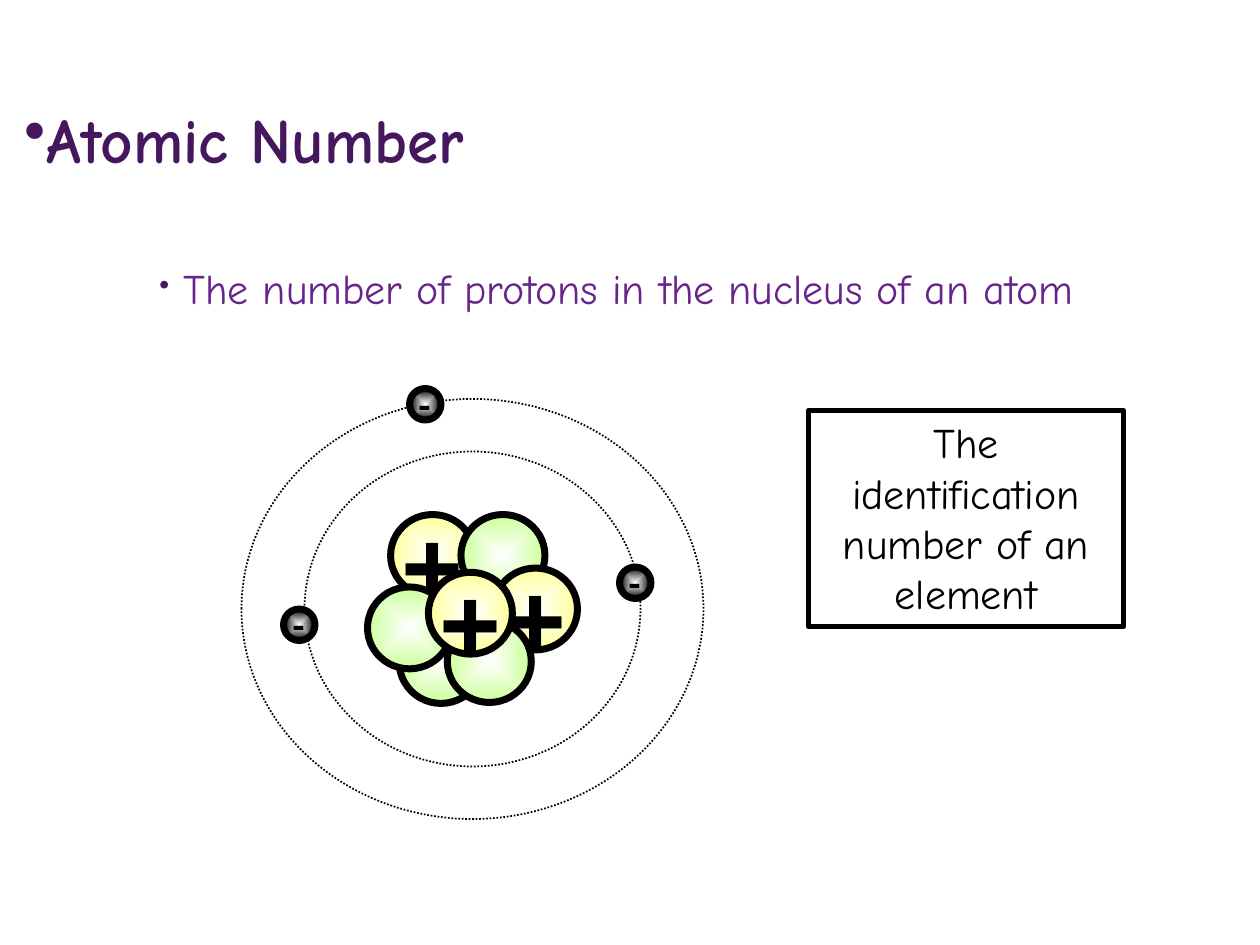
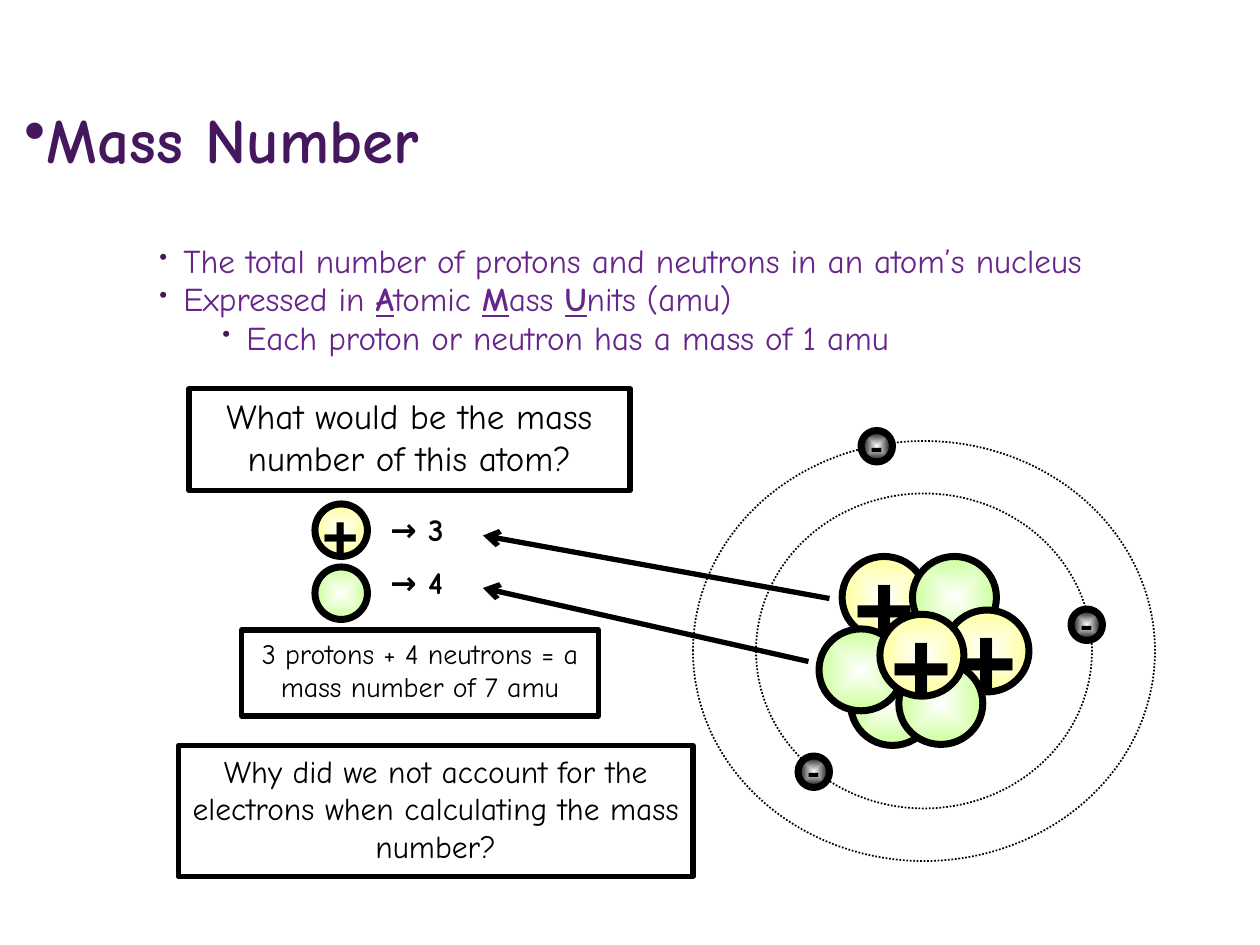
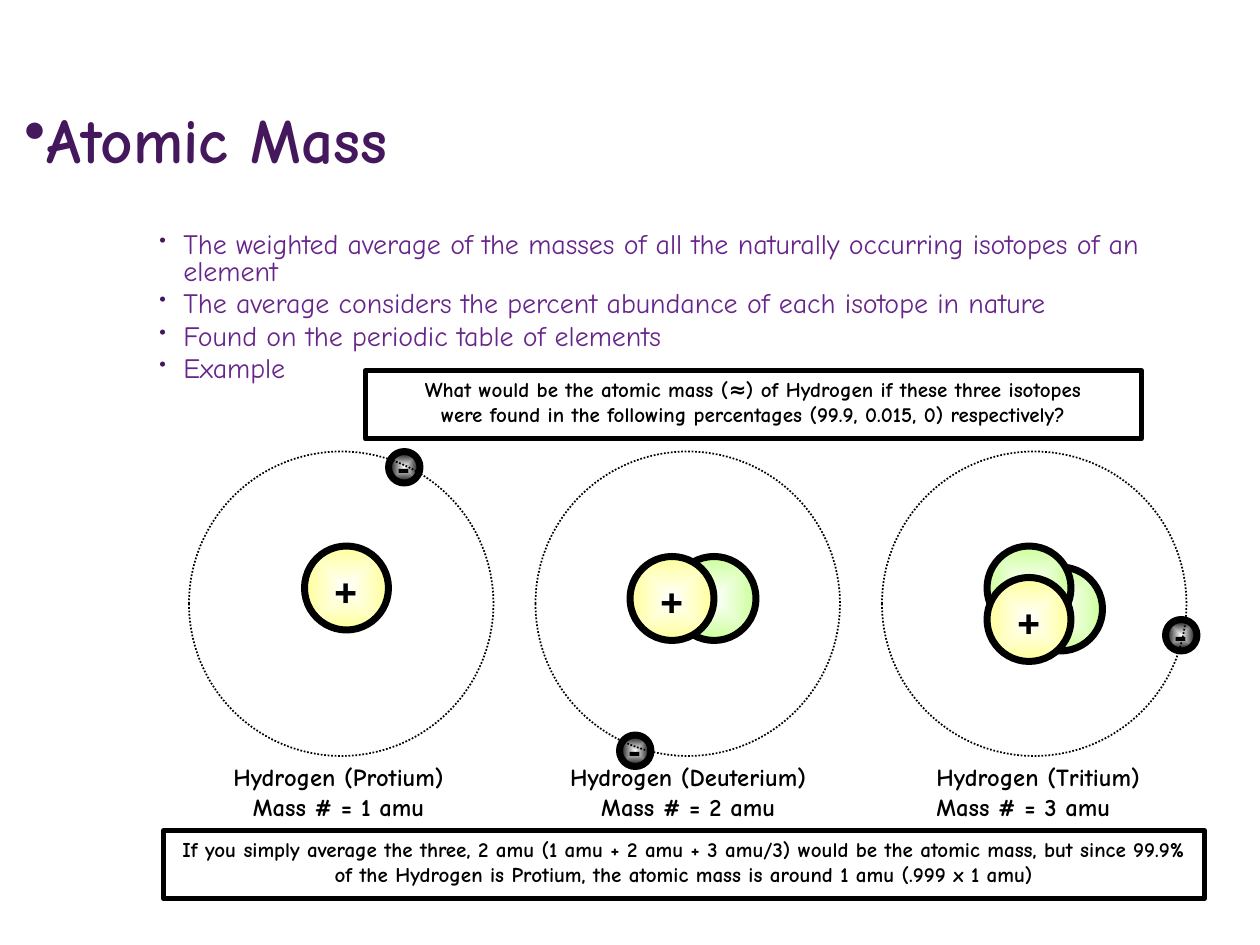
from dataclasses import dataclass
from typing import NamedTuple

from lxml.etree import SubElement
from pptx import Presentation
from pptx.dml.color import RGBColor
from pptx.enum.dml import MSO_LINE
from pptx.enum.shapes import MSO_CONNECTOR, MSO_SHAPE
from pptx.enum.text import MSO_ANCHOR, MSO_AUTO_SIZE, PP_ALIGN
from pptx.oxml.ns import qn
from pptx.util import Emu, Inches, Pt

WIDE, HIGH = Inches(10), Inches(7.5)
COLS, ROWS = 120, 90
HAND, SIGN = "Comic Neue", "TeX Gyre Adventor"
BLACK, WHITE, PLUM, GRAPE = "000000", "FFFFFF", "45185E", "67258C"
LEFT, MID = PP_ALIGN.LEFT, PP_ALIGN.CENTER


class Area(NamedTuple):
    """A place on the grid, in columns and rows."""
    col: float
    row: float
    wide: float
    tall: float


class Spot(NamedTuple):
    col: float
    row: float


@dataclass(frozen=True)
class Kind:
    """A sort of particle: edge colour, sign, sign size and extent."""
    edge: str
    sign: str = ""
    size: int = 20
    wide: float = 8
    tall: float = 8


@dataclass(frozen=True)
class Grain:
    kind: Kind
    spot: Spot


@dataclass(frozen=True)
class Note:
    """A block of text, one string for each paragraph."""
    area: Area
    lines: tuple[str, ...]
    size: int
    bold: bool = False
    align: PP_ALIGN = MID


@dataclass(frozen=True)
class Atom:
    """A one-ring atom; the spots of its grains count from the ring's corner."""
    grains: tuple[Grain, ...]
    label: Note


YELLOW, GREEN = "FFFF99", "CCFF99"
PROTON = Kind(YELLOW, "+", 54, tall=7.8)
NEUTRON = Kind(GREEN, tall=7.8)
BIG = Kind(GREEN)
LONE = Kind(YELLOW, "+")
ELECTRON = Kind(BLACK, "-", wide=3, tall=3)
KEYS = (Kind(YELLOW, "+", 32, 5, 5), Kind(GREEN, wide=5, tall=5))

CORE = (
    Grain(BIG, Spot(15, 21)),
    Grain(PROTON, Spot(14.2, 11)),
    Grain(NEUTRON, Spot(20.9, 11)),
    Grain(PROTON, Spot(24, 16.1)),
    Grain(NEUTRON, Spot(12, 17.9)),
    Grain(NEUTRON, Spot(19.6, 21.1)),
    Grain(PROTON, Spot(17.8, 16.5)),
)

RING, STEP, START = 29, 33, Spot(18, 43)
ATOMS = (
    Atom((Grain(LONE, Spot(11, 9)), Grain(ELECTRON, Spot(19, 0))),
         Note(Area(20.2, 72, 24.1, 6.8), ("Hydrogen (Protium)", "Mass # = 1 amu"), 14, True)),
    Atom((Grain(BIG, Spot(13, 10)), Grain(LONE, Spot(9, 10)), Grain(ELECTRON, Spot(8, 27))),
         Note(Area(52, 72, 27.1, 6.8), ("Hydrogen (Deuterium)", "Mass # = 2 amu"), 14, True)),
    Atom((Grain(BIG, Spot(13, 11)), Grain(BIG, Spot(10, 9)), Grain(LONE, Spot(10, 12)),
          Grain(ELECTRON, Spot(27, 16))),
         Note(Area(88, 72, 23.9, 6.8), ("Hydrogen (Tritium)", "Mass # = 3 amu"), 14, True, LEFT)),
)


def x(col: float) -> Emu:
    return Emu(round(WIDE * col / COLS))


def y(row: float) -> Emu:
    return Emu(round(HIGH * row / ROWS))


def place(area: Area) -> tuple[Emu, Emu, Emu, Emu]:
    return x(area.col), y(area.row), x(area.wide), y(area.tall)


def tint(code: str) -> RGBColor:
    return RGBColor.from_string(code)


def style(para, size: float, code: str = BLACK, bold: bool = False, face: str = HAND) -> None:
    font = para.font
    font.name, font.size, font.bold = face, Pt(size), bold
    font.color.rgb = tint(code)


def bullet(para, left: float = 0, hang: float = 0, share: int = 100) -> None:
    """Give a paragraph a plum dot; left and hang are inches."""
    props = para._p.get_or_add_pPr()
    props.set("marL", str(Inches(left)))
    props.set("indent", str(-Inches(hang)))
    shade = SubElement(props, qn("a:buClr"))
    SubElement(shade, qn("a:srgbClr"), val=PLUM)
    SubElement(props, qn("a:buSzPct"), val=str(share * 1000))
    SubElement(props, qn("a:buChar"), char="•")


def start(deck, title: str):
    """Add a slide with its title."""
    slide = deck.slides.add_slide(deck.slide_layouts[5])
    head = slide.shapes.title
    head.left, head.top, head.width, head.height = place(Area(1.1, 9, 108, 8.4))
    frame = head.text_frame
    frame.text = title
    frame.auto_size, frame.word_wrap = MSO_AUTO_SIZE.NONE, True
    frame.vertical_anchor = MSO_ANCHOR.MIDDLE
    para = frame.paragraphs[0]
    para.alignment = LEFT
    bullet(para)
    style(para, 36, PLUM, True)
    return slide


def body(slide, area: Area, lines: tuple[tuple[int, str], ...], size: int, lead: float) -> None:
    """Write (level, text) bullets; text between stars is bold and underlined."""
    frame = slide.shapes.add_textbox(*place(area)).text_frame
    frame.word_wrap = True
    for num, (level, text) in enumerate(lines):
        para = frame.add_paragraph() if num else frame.paragraphs[0]
        para.level, para.line_spacing = level, lead
        para.space_before = Pt(size * 0.2 if num else 0)
        bullet(para, 0.19 + level / 2, 0.19, 70)
        style(para, size, GRAPE)
        for turn, piece in enumerate(text.split("*")):
            run = para.add_run()
            run.text = piece
            if turn % 2:
                run.font.bold = run.font.underline = True


def write(shape, note: Note, wrap: bool) -> None:
    frame = shape.text_frame
    frame.word_wrap, frame.auto_size = wrap, MSO_AUTO_SIZE.SHAPE_TO_FIT_TEXT
    frame.vertical_anchor = MSO_ANCHOR.TOP
    frame.text = "\n".join(note.lines)
    for para in frame.paragraphs:
        para.alignment = note.align
        style(para, note.size, bold=note.bold)


def label(slide, note: Note, wrap: bool = False) -> None:
    write(slide.shapes.add_textbox(*place(note.area)), note, wrap)


def form(slide, kind: MSO_SHAPE, area: Area, weight: float):
    """Add a black-edged shape without shadow."""
    shape = slide.shapes.add_shape(kind, *place(area))
    shape.shadow.inherit = False
    shape.line.color.rgb, shape.line.width = tint(BLACK), Pt(weight)
    return shape


def box(slide, note: Note) -> None:
    shape = form(slide, MSO_SHAPE.RECTANGLE, note.area, 3)
    shape.fill.solid()
    shape.fill.fore_color.rgb = tint(WHITE)
    write(shape, note, True)


def orbit(slide, area: Area) -> None:
    ring = form(slide, MSO_SHAPE.OVAL, area, 1)
    ring.fill.background()
    ring.line.dash_style = MSO_LINE.ROUND_DOT


def glow(shape, edge: str) -> None:
    """Fill with a gradient from a white centre out to the edge colour."""
    shape.fill.gradient()
    for stop, code in zip(shape.fill.gradient_stops, (WHITE, edge)):
        stop.color.rgb = tint(code)
    grad = shape._element.spPr.find(qn("a:gradFill"))
    grad.remove(grad.find(qn("a:lin")))
    route = SubElement(grad, qn("a:path"), {"path": "shape"})
    SubElement(route, qn("a:fillToRect"), dict.fromkeys("ltrb", "50000"))


def ball(slide, grain: Grain, base: Spot = Spot(0, 0)) -> None:
    kind, spot = grain.kind, grain.spot
    area = Area(base.col + spot.col, base.row + spot.row, kind.wide, kind.tall)
    shape = form(slide, MSO_SHAPE.OVAL, area, 4)
    glow(shape, kind.edge)
    if kind.sign:
        frame = shape.text_frame
        frame.text, frame.word_wrap = kind.sign, False
        frame.vertical_anchor = MSO_ANCHOR.MIDDLE
        para = frame.paragraphs[0]
        para.alignment = MID
        style(para, kind.size, bold=True, face=SIGN)


def lithium(slide, base: Spot, third: Spot) -> None:
    """Draw the two-ring atom; third is the spot of its one free electron."""
    for grain in CORE:
        ball(slide, grain, base)
    orbit(slide, Area(base.col + 6, base.row + 5, 32, 30))
    orbit(slide, Area(base.col, base.row, 44, 40))
    for spot in (Spot(36, 16), third, Spot(16, -1)):
        ball(slide, Grain(ELECTRON, spot), base)


def arrow(slide, tail: Spot, tip: Spot) -> None:
    link = slide.shapes.add_connector(
        MSO_CONNECTOR.STRAIGHT, x(tail.col), y(tail.row), x(tip.col), y(tip.row))
    link.line.color.rgb, link.line.width = tint(BLACK), Pt(3)
    props = link._element.spPr
    SubElement(props.find(qn("a:ln")), qn("a:tailEnd"), type="arrow")
    SubElement(props, qn("a:effectLst"))


def number(deck) -> None:
    slide = start(deck, "Atomic Number")
    body(slide, Area(14, 25, 100, 7),
         ((0, "The number of protons in the nucleus of an atom"),), 24, 0.9)
    lithium(slide, Spot(23, 38), Spot(4, 20))
    box(slide, Note(Area(77, 39.1, 30, 20.6),
                    ("The identification number of an element",), 24))


def mass(deck) -> None:
    slide = start(deck, "Mass Number")
    body(slide, Area(14, 23, 100, 16), (
        (0, "The total number of protons and neutrons in an atom’s nucleus"),
        (0, "Expressed in *A*tomic *M*ass *U*nits (amu)"),
        (1, "Each proton or neutron has a mass of 1 amu"),
    ), 19, 0.8)
    lithium(slide, Spot(66, 42), Spot(10, 30))
    box(slide, Note(Area(18, 37, 42, 9.7), ("What would be the mass number of this atom?",), 20))
    tails, tips = (Spot(79, 57), Spot(77, 63)), (Spot(46, 51), Spot(46, 56))
    for num, (kind, tail, tip) in enumerate(zip(KEYS, tails, tips)):
        arrow(slide, tail, tip)
        ball(slide, Grain(kind, Spot(30, 48 + 6 * num)))
        label(slide, Note(Area(36, 48 + 5 * num, 10.2, 4.8), (f"→ {3 + num}",), 18, True, LEFT), True)
    box(slide, Note(Area(23, 60, 34, 8.2),
                    ("3 protons + 4 neutrons = a mass number of 7 amu",), 16))
    box(slide, Note(Area(17, 71, 49, 12.5), (
        "Why did we not account for the electrons when calculating the mass number?",), 18))


def average(deck) -> None:
    slide = start(deck, "Atomic Mass")
    body(slide, Area(14, 21.6, 100, 17), (
        (0, "The weighted average of the masses of all the naturally occurring isotopes of an element"),
        (0, "The average considers the percent abundance of each isotope in nature"),
        (0, "Found on the periodic table of elements"),
        (0, "Example"),
    ), 16, 0.8)
    for num, atom in enumerate(ATOMS):
        base = Spot(START.col + STEP * num, START.row)
        for grain in atom.grains:
            ball(slide, grain, base)
        orbit(slide, Area(*base, RING, RING))
        label(slide, atom.label)
    box(slide, Note(Area(15.6, 79.1, 99.1, 6.5), (
        "If you simply average the three, 2 amu (1 amu + 2 amu + 3 amu/3) would be the atomic mass, "
        "but since 99.9% of the Hydrogen is Protium, the atomic mass is around 1 amu (.999 x 1 amu)",
    ), 12, True))
    box(slide, Note(Area(34.8, 35.3, 73.9, 6.5), (
        "What would be the atomic mass (≈) of Hydrogen if these three isotopes",
        "were found in the following percentages (99.9, 0.015, 0) respectively?",
    ), 12, True))


def main() -> None:
    deck = Presentation()
    deck.slide_width, deck.slide_height = WIDE, HIGH
    for build in (number, mass, average):
        build(deck)
    deck.save("out.pptx")


if __name__ == "__main__":
    main()
